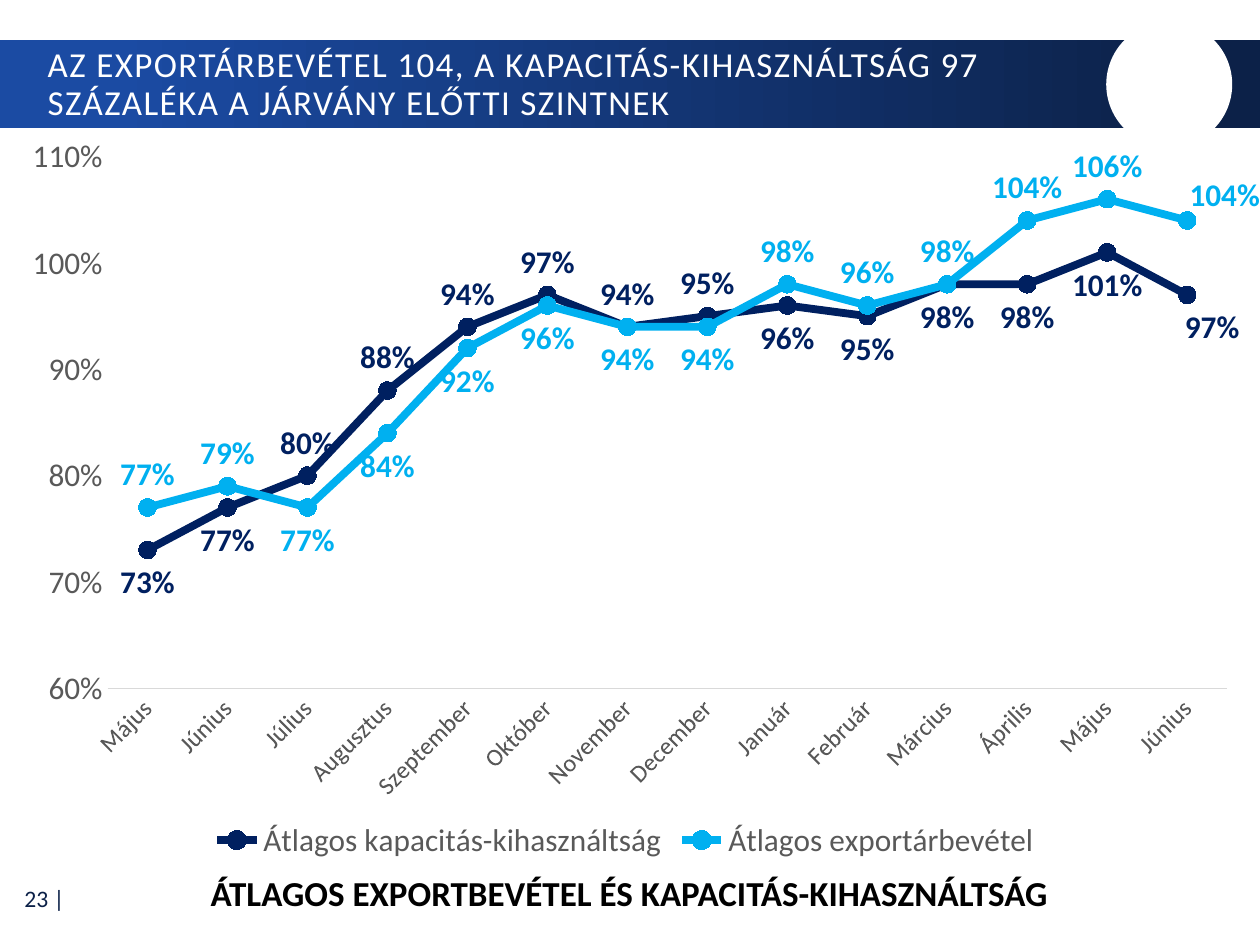
from lxml.etree import SubElement
from pptx import Presentation
from pptx.chart.data import CategoryChartData
from pptx.dml.color import RGBColor
from pptx.enum.chart import (XL_CHART_TYPE, XL_LABEL_POSITION, XL_LEGEND_POSITION,
                             XL_MARKER_STYLE, XL_TICK_MARK)
from pptx.enum.shapes import MSO_SHAPE
from pptx.enum.text import MSO_ANCHOR, PP_ALIGN
from pptx.oxml import parse_xml
from pptx.oxml.ns import nsdecls, qn
from pptx.util import Inches, Pt

NAVY, BLUE = RGBColor(0x0C, 0x21, 0x48), RGBColor(0x1B, 0x4B, 0xA3)
DARK, CYAN = RGBColor(0x00, 0x20, 0x60), RGBColor(0x00, 0xB0, 0xF0)
GREY, RULE = RGBColor(0x59, 0x59, 0x59), RGBColor(0xD9, 0xD9, 0xD9)
WHITE, BLACK = RGBColor(0xFF, 0xFF, 0xFF), RGBColor(0, 0, 0)
FONT = "Calibri"
ABOVE, BELOW = XL_LABEL_POSITION.ABOVE, XL_LABEL_POSITION.BELOW

# Content
TITLE = "AZ EXPORTÁRBEVÉTEL 104, A KAPACITÁS-KIHASZNÁLTSÁG 97 SZÁZALÉKA A JÁRVÁNY ELŐTTI SZINTNEK"
CAPTION = "ÁTLAGOS EXPORTBEVÉTEL ÉS KAPACITÁS-KIHASZNÁLTSÁG"
PAGE = "23 |"
MONTHS = ["Május", "Június", "Július", "Augusztus", "Szeptember", "Október", "November",
          "December", "Január", "Február", "Március", "Április", "Május", "Június"]
# name, percentages, colour, usual label side, swapped label side, shift of the last label
SERIES = [
    ("Átlagos kapacitás-kihasználtság",
     [73, 77, 80, 88, 94, 97, 94, 95, 96, 95, 98, 98, 101, 97], DARK, ABOVE, BELOW, (0.02, 0)),
    ("Átlagos exportárbevétel",
     [77, 79, 77, 84, 92, 96, 94, 94, 98, 96, 98, 104, 106, 104], CYAN, BELOW, ABOVE, (0.03, 0.01)),
]
SWAPPED = [0, 1, *range(8, 14)]
PLOT = {"x": 0.086, "y": 0.04, "w": 0.895, "h": 0.72}


def set_font(font, size, color, bold=False):
    for key, value in {"name": FONT, "size": Pt(size), "bold": bold}.items():
        setattr(font, key, value)
    font.color.rgb = color


def add_text(s, box, text, size, color, align=PP_ALIGN.LEFT, bold=False, anchor=MSO_ANCHOR.MIDDLE):
    tf = s.shapes.add_textbox(*map(Inches, box)).text_frame
    tf.word_wrap, tf.vertical_anchor = True, anchor
    p = tf.paragraphs[0]
    p.alignment = align
    r = p.add_run()
    r.text = text
    set_font(r.font, size, color, bold)
    return p, r


def add_plain(s, kind, box):
    shape = s.shapes.add_shape(kind, *map(Inches, box))
    shape.shadow.inherit = False
    shape.line.fill.background()
    return shape


def manual_layout(values, inner=False):
    layout = parse_xml(f"<c:layout {nsdecls('c')}><c:manualLayout/></c:layout>")
    items = [("layoutTarget", "inner"), ("xMode", "edge"), ("yMode", "edge")] if inner else []
    for tag, value in items + list(values.items()):
        SubElement(layout[0], qn(f"c:{tag}")).set("val", str(value))
    return layout


def style_series(ser, color, usual, swapped, shift):
    ser.smooth = False
    ser.format.line.color.rgb = color
    ser.format.line.width = Pt(4.5)
    ser.marker.style, ser.marker.size = XL_MARKER_STYLE.CIRCLE, 10
    ser.marker.format.fill.solid()
    ser.marker.format.fill.fore_color.rgb = color
    ser.marker.format.line.color.rgb = color
    labels = ser.data_labels
    labels.show_value, labels.position = True, usual
    labels.number_format, labels.number_format_is_linked = "0%", False
    set_font(labels.font, 18, color, True)
    for i in SWAPPED:
        label = ser.points[i].data_label
        set_font(label.font, 18, color, True)
        label.position = swapped
    last = labels._element.findall(qn("c:dLbl"))[-1]
    last.insert(1, manual_layout(dict(zip("xy", shift))))


def add_line_chart(s):
    data = CategoryChartData(number_format="0%")
    data.categories = MONTHS
    for name, percents, *_ in SERIES:
        data.add_series(name, [v / 100 for v in percents])
    chart = s.shapes.add_chart(XL_CHART_TYPE.LINE_MARKERS, *map(Inches, (0, 1.01, 10, 5.86)),
                               data).chart
    set_font(chart.font, 18, BLACK)
    chart.has_title = False
    chart.has_legend = True
    chart.legend.position = XL_LEGEND_POSITION.BOTTOM
    chart.legend.include_in_layout = False
    set_font(chart.legend.font, 18, GREY)

    # Axes
    cat, val = chart.category_axis, chart.value_axis
    for axis, size in ((cat, 14), (val, 18)):
        axis.major_tick_mark = axis.minor_tick_mark = XL_TICK_MARK.NONE
        axis.has_major_gridlines = False
        set_font(axis.tick_labels.font, size, GREY)
    cat.format.line.color.rgb = RULE
    cat.format.line.width = Pt(0.75)
    cat._element.find(qn("c:txPr")).find(qn("a:bodyPr")).set("rot", "-2700000")
    val.format.line.fill.background()
    val.minimum_scale, val.maximum_scale, val.major_unit = 0.6, 1.1, 0.1
    val.tick_labels.number_format = "0%"
    val.tick_labels.number_format_is_linked = False

    # Plot area and lines
    plot_area = chart._chartSpace.chart.plotArea
    for old in plot_area.findall(qn("c:layout")):
        plot_area.remove(old)
    plot_area.insert(0, manual_layout(PLOT, inner=True))
    chart.plots[0].vary_by_categories = False
    for ser, (_, _, *style) in zip(chart.plots[0].series, SERIES):
        style_series(ser, *style)


prs = Presentation()
prs.slide_width, prs.slide_height = Inches(10), Inches(7.5)
s = prs.slides.add_slide(prs.slide_layouts[6])

# Page number
add_text(s, (0.01, 6.94, 0.6, 0.37), PAGE, 13.5, NAVY, PP_ALIGN.RIGHT)

# Title band with a white disc
fill = add_plain(s, MSO_SHAPE.RECTANGLE, (0, 0.32, 10, 0.7)).fill
fill.gradient()
fill.gradient_angle = 0
for stop, (position, color) in zip(fill.gradient_stops, ((0.09, BLUE), (0.95, NAVY))):
    stop.position, stop.color.rgb = position, color
disc = add_plain(s, MSO_SHAPE.OVAL, (8.78, 0.17, 1, 1))
disc.fill.solid()
disc.fill.fore_color.rgb = WHITE
p, r = add_text(s, (0.28, 0.34, 8.44, 0.67), TITLE, 20, WHITE)
p.line_spacing = 0.9
r.font._element.set("spc", "80")

# Caption and chart
add_text(s, (0.85, 6.87, 8.29, 0.44), CAPTION, 20, BLACK, PP_ALIGN.CENTER, True, MSO_ANCHOR.TOP)
add_line_chart(s)

prs.save("out.pptx")
